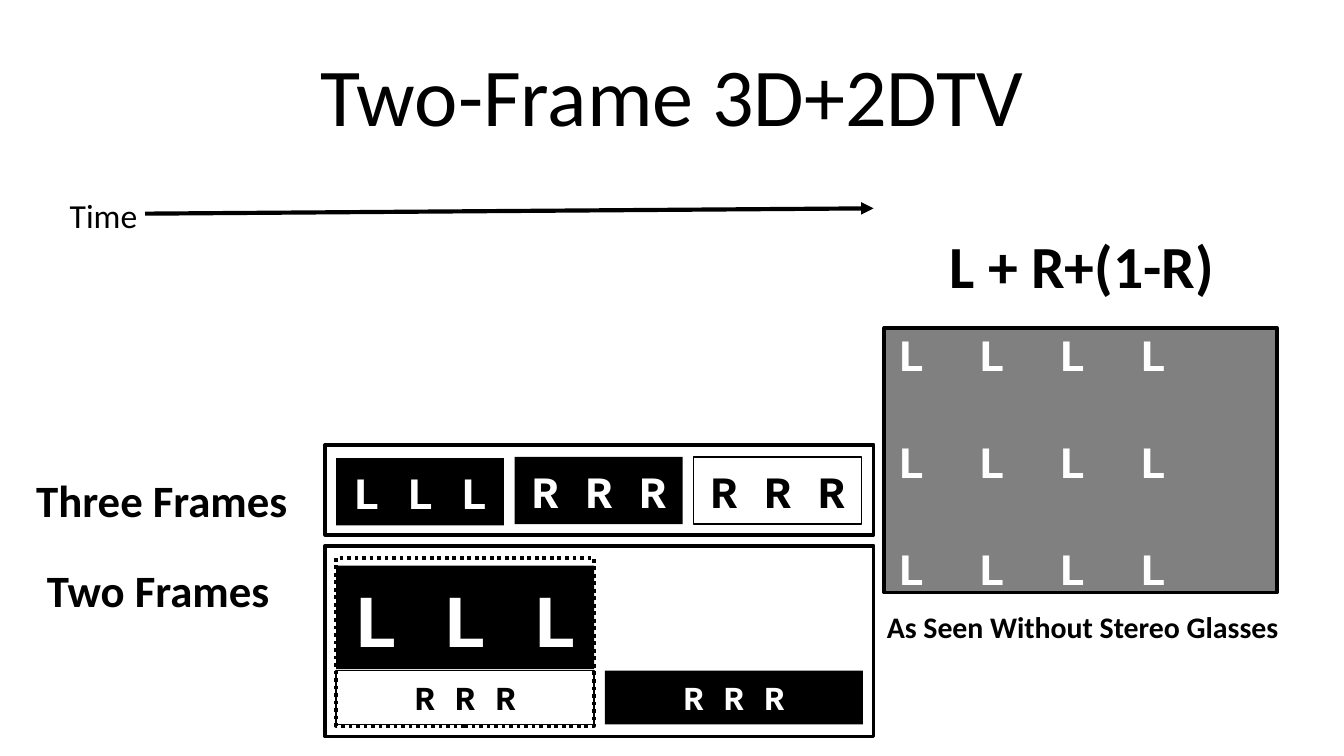
from dataclasses import dataclass
from typing import Optional

from lxml import etree
from pptx import Presentation
from pptx.dml.color import RGBColor
from pptx.enum.dml import MSO_LINE
from pptx.enum.shapes import MSO_CONNECTOR, MSO_SHAPE
from pptx.enum.text import MSO_ANCHOR, PP_ALIGN
from pptx.oxml.ns import qn
from pptx.util import Inches, Pt

BLACK = RGBColor(0, 0, 0)
WHITE = RGBColor(255, 255, 255)
GRAY = RGBColor(128, 128, 128)
LEFT, CENTER = PP_ALIGN.LEFT, PP_ALIGN.CENTER
TOP, MIDDLE = MSO_ANCHOR.TOP, MSO_ANCHOR.MIDDLE
RECT, STRAIGHT = MSO_SHAPE.RECTANGLE, MSO_CONNECTOR.STRAIGHT
DOTTED = MSO_LINE.ROUND_DOT  # written as sysDot
SANS, MONO = "Calibri", "Courier New"


@dataclass
class Label:
    text: str
    left: float
    top: float
    width: float
    height: float
    size: int
    bold: bool = True
    align: PP_ALIGN = LEFT
    anchor: MSO_ANCHOR = TOP
    wrap: bool = True


@dataclass
class Box:
    left: float
    top: float
    width: float
    height: float
    fill: Optional[RGBColor] = None
    line: float = 0
    dash: Optional[MSO_LINE] = None
    text: str = ""
    size: int = 24
    color: RGBColor = WHITE
    align: PP_ALIGN = CENTER
    anchor: MSO_ANCHOR = TOP
    gap: float = 0  # space between lines, points
    track: float = 0  # extra space between letters, points


def write(frame, item, face: str, color: RGBColor, bold: bool) -> None:
    frame.word_wrap = True
    frame.vertical_anchor = item.anchor
    frame.text = item.text
    for para in frame.paragraphs:
        para.alignment = item.align
        font = para.font
        font.name, font.size, font.bold = face, Pt(item.size), bold
        font.color.rgb = color


def add_label(slide, item: Label) -> None:
    shape = slide.shapes.add_textbox(Inches(item.left), Inches(item.top),
                                     Inches(item.width), Inches(item.height))
    write(shape.text_frame, item, SANS, BLACK, item.bold)
    shape.text_frame.word_wrap = item.wrap


def add_box(slide, box: Box) -> None:
    shape = slide.shapes.add_shape(RECT, Inches(box.left), Inches(box.top),
                                   Inches(box.width), Inches(box.height))
    shape.shadow.inherit = False
    if box.fill is None:
        shape.fill.background()
    else:
        shape.fill.solid()
        shape.fill.fore_color.rgb = box.fill
    if box.line:
        shape.line.color.rgb = BLACK
        shape.line.width = Pt(box.line)
        if box.dash is not None:
            shape.line.dash_style = box.dash
    else:
        shape.line.fill.background()
    if box.text:
        write(shape.text_frame, box, MONO, box.color, True)
        for num, para in enumerate(shape.text_frame.paragraphs):
            if box.gap and num:
                para.space_before = Pt(box.gap)
            if box.track:
                for run in para.runs:
                    run.font._element.set("spc", str(round(box.track * 100)))


def add_arrow(slide, x1: float, y1: float, x2: float, y2: float) -> None:
    arrow = slide.shapes.add_connector(STRAIGHT, Inches(x1), Inches(y1),
                                       Inches(x2), Inches(y2))
    arrow.line.color.rgb = BLACK
    arrow.line.width = Pt(2.25)
    etree.SubElement(arrow.line._get_or_add_ln(), qn("a:tailEnd"), type="triangle")
    etree.SubElement(arrow._element.spPr, qn("a:effectLst"))


# Column edges shared by both frame rows
EDGE, START = 2.42, 2.5
SMALL, WIDE, SPACE = 1.25, 1.92, 0.08
STEP = SMALL + SPACE
BASE = 4.99

BOXES = [
    # Blended view
    Box(6.58, 2.44, 2.92, 1.97, GRAY, 2, text="\n".join(["L L L L"] * 3),
        align=LEFT, anchor=MIDDLE, gap=28.5, track=7.2),
    # Three frames
    Box(START, 3.41, SMALL, 0.5, BLACK, text="L L L"),
    Box(START + STEP, 3.4, SMALL, 0.5, BLACK, text="R R R"),
    Box(START + 2 * STEP, 3.4, SMALL, 0.5, WHITE, 0.75, text="R R R", color=BLACK),
    Box(EDGE, 3.31, 4.08, 0.67, line=2),
    # Two frames
    Box(START, 4.21, WIDE, 0.77, BLACK, text="L L L", size=40),
    Box(EDGE, 4.06, 4.08, 1.42, line=2),
    Box(START + WIDE + SPACE, BASE, WIDE, 0.4, BLACK, text="R R R", size=18),
    Box(START, BASE, WIDE, 0.4, WHITE, 0.75, text="R R R", size=18, color=BLACK),
    Box(START, 4.15, WIDE, 1.25, line=2, dash=DOTTED),
]

LABELS = [
    Label("Two-Frame 3D+2DTV", 0.5, 0.23, 9, 0.94, 44, False, CENTER, MIDDLE),
    Label("Time", 0.42, 1.4, 0.71, 0.4, 18, False),
    Label("L + R+(1-R)", 6.6, 1.65, 2.9, 0.64, 32, align=CENTER),
    Label("Three Frames", 0.17, 3.47, 2.42, 0.5, 24),
    Label("Two Frames", 0.25, 4.14, 2.33, 0.5, 24),
    Label("As Seen Without Stereo Glasses", 6.5, 4.48, 3.15, 0.37, 16, wrap=False),
]


def main() -> None:
    deck = Presentation()
    # Widescreen, 16 to 9
    deck.slide_width, deck.slide_height = Inches(10), Inches(10 * 9 / 16)
    slide = deck.slides.add_slide(deck.slide_layouts[6])
    for box in BOXES:
        add_box(slide, box)
    for label in LABELS:
        add_label(slide, label)
    # Time axis
    add_arrow(slide, 1.08, 1.59, 6.5, 1.55)
    deck.save("out.pptx")


if __name__ == "__main__":
    main()
